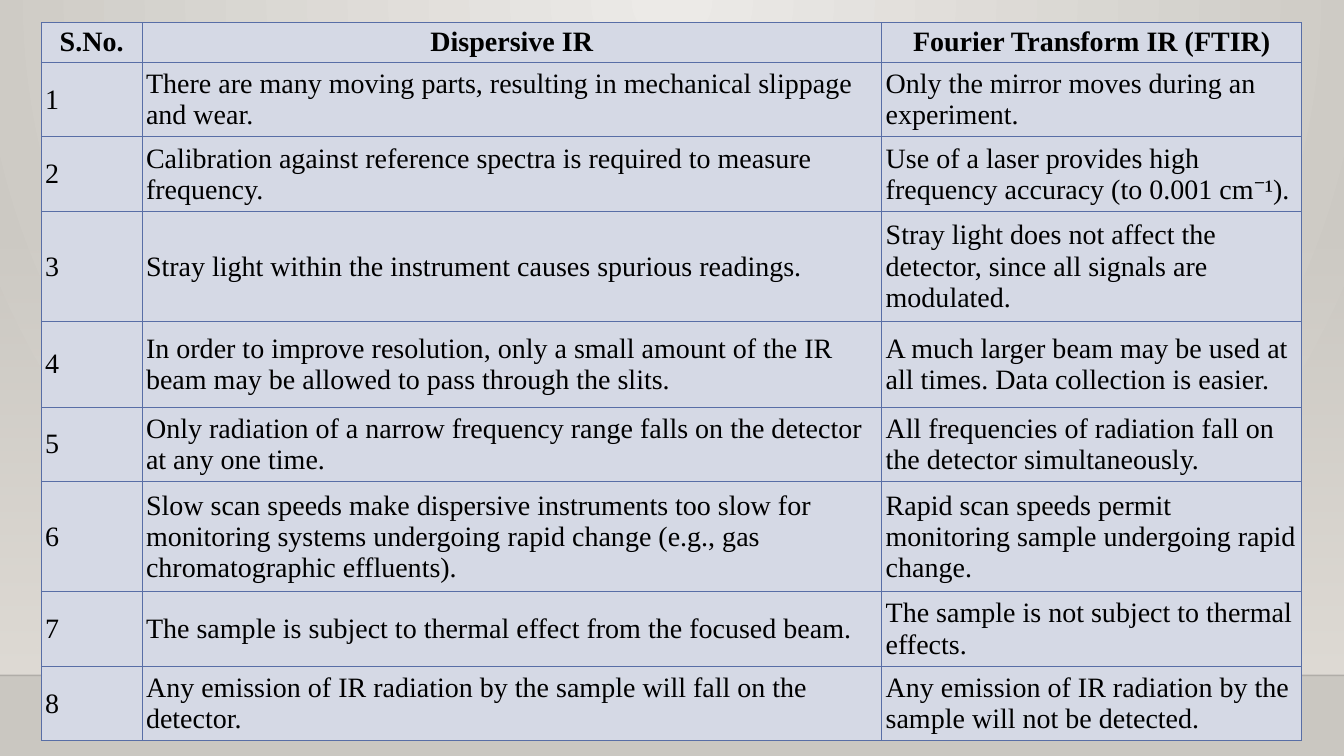
from lxml.etree import SubElement
from pptx import Presentation
from pptx.dml.color import RGBColor
from pptx.enum.shapes import MSO_CONNECTOR, MSO_SHAPE
from pptx.enum.text import MSO_ANCHOR, PP_ALIGN
from pptx.oxml import parse_xml
from pptx.oxml.ns import nsdecls, qn
from pptx.util import Cm, Pt

BLACK = RGBColor(0x00, 0x00, 0x00)
WALL_LIGHT = RGBColor(0xEC, 0xEA, 0xE7)
WALL_DARK = RGBColor(0xCA, 0xC7, 0xC1)
GLOW = RGBColor(0xDF, 0xDB, 0xD5)
CELL_FILL = RGBColor(0xD5, 0xD9, 0xE5)
BORDER = RGBColor(0x58, 0x6E, 0xA6)

WIDTH, HEIGHT, FLOOR = 33.87, 19.05, 17.02

COLUMN_WIDTHS = [2.54, 18.64, 10.59]
ROW_HEIGHTS = [1, 1.88, 1.88, 2.77, 2.16, 1.88, 2.77, 1.88, 1.88]
HEADINGS = ["S.No.", "Dispersive IR", "Fourier Transform IR (FTIR)"]
COMPARISONS = [
    ("There are many moving parts, resulting in mechanical slippage and wear.",
     "Only the mirror moves during an experiment."),
    ("Calibration against reference spectra is required to measure frequency.",
     "Use of a laser provides high frequency accuracy (to 0.001 cm⁻¹)."),
    ("Stray light within the instrument causes spurious readings.",
     "Stray light does not affect the detector, since all signals are modulated."),
    ("In order to improve resolution, only a small amount of the IR beam may be "
     "allowed to pass through the slits.",
     "A much larger beam may be used at all times. Data collection is easier."),
    ("Only radiation of a narrow frequency range falls on the detector at any one time.",
     "All frequencies of radiation fall on the detector simultaneously."),
    ("Slow scan speeds make dispersive instruments too slow for monitoring systems "
     "undergoing rapid change (e.g., gas chromatographic effluents).",
     "Rapid scan speeds permit monitoring sample undergoing rapid change."),
    ("The sample is subject to thermal effect from the focused beam.",
     "The sample is not subject to thermal effects."),
    ("Any emission of IR radiation by the sample will fall on the detector.",
     "Any emission of IR radiation by the sample will not be detected."),
]


class SlideBuilder:
    font = "Times New Roman"
    size = Pt(20)

    def __init__(self, page):
        self.page = page

    def set_alpha(self, color_parent, percent):
        color = color_parent.find(".//" + qn("a:srgbClr"))
        SubElement(color, qn("a:alpha"), val=str(percent * 1000))

    def gradient(self, fill, colors):
        fill.gradient()
        for stop, color, position in zip(fill.gradient_stops, colors, (0, 1)):
            stop.color.rgb = color
            stop.position = position

    def background(self, center, edge):
        self.gradient(self.page.background.fill, (center, edge))
        grad = self.page.element.find(".//" + qn("a:gradFill"))
        grad.replace(grad.find(qn("a:lin")), parse_xml(
            f'<a:path {nsdecls("a")} path="circle">'
            '<a:fillToRect l="43000" t="0" r="43000" b="100000"/></a:path>'))

    def fading_band(self, top, height, color):
        band = self.page.shapes.add_shape(
            MSO_SHAPE.RECTANGLE, 0, Cm(top), Cm(WIDTH), Cm(height))
        band.shadow.inherit = False
        band.line.fill.background()
        self.gradient(band.fill, (color, color))
        band.fill.gradient_angle = 270
        self.set_alpha(band.element.find(".//" + qn("a:gs")), 0)

    def horizon(self, top, color, opacity):
        line = self.page.shapes.add_connector(
            MSO_CONNECTOR.STRAIGHT, 0, Cm(top), Cm(WIDTH), Cm(top))
        line.line.color.rgb = color
        line.line.width = Pt(1)
        properties = line.element.spPr
        self.set_alpha(properties, opacity)
        SubElement(properties, qn("a:effectLst"))

    def cell_borders(self, cell):
        properties = cell._tc.get_or_add_tcPr()
        for index, side in enumerate(("lnL", "lnR", "lnT", "lnB")):
            properties.insert(index, parse_xml(
                f'<a:{side} {nsdecls("a")} w="{Pt(0.75)}"><a:solidFill>'
                f'<a:srgbClr val="{BORDER}"/></a:solidFill></a:{side}>'))

    def cell(self, cell, text, heading, centered):
        cell.margin_left = cell.margin_right = Cm(0.1)
        cell.margin_top = cell.margin_bottom = Cm(0.05)
        cell.vertical_anchor = MSO_ANCHOR.MIDDLE
        cell.fill.solid()
        cell.fill.fore_color.rgb = CELL_FILL
        self.cell_borders(cell)
        cell.text_frame.text = text
        para = cell.text_frame.paragraphs[0]
        para.alignment = PP_ALIGN.CENTER if centered else PP_ALIGN.LEFT
        for span in para.runs:
            span.font.name = self.font
            span.font.size = self.size
            span.font.bold = heading
            span.font.color.rgb = BLACK

    def table(self, left, top, widths, heights, rows):
        table = self.page.shapes.add_table(
            len(heights), len(widths), Cm(left), Cm(top),
            Cm(sum(widths)), Cm(sum(heights))).table
        table.horz_banding = False
        for column, width in zip(table.columns, widths):
            column.width = Cm(width)
        for index, (row, height, texts) in enumerate(zip(table.rows, heights, rows)):
            row.height = Cm(height)
            for cell, text in zip(row.cells, texts):
                self.cell(cell, text, heading=index == 0, centered=index == 0)


def main():
    deck = Presentation()
    deck.slide_width, deck.slide_height = Cm(WIDTH), Cm(HEIGHT)
    builder = SlideBuilder(deck.slides.add_slide(deck.slide_layouts[6]))

    # Backdrop: lit wall with a floor line
    builder.background(WALL_LIGHT, WALL_DARK)
    builder.fading_band(5.61, FLOOR - 5.61, GLOW)
    builder.horizon(FLOOR, BLACK, 20)

    # Comparison table, numbered from 1
    rows = [HEADINGS] + [(str(number), *pair)
                         for number, pair in enumerate(COMPARISONS, 1)]
    builder.table(1.04, 0.57, COLUMN_WIDTHS, ROW_HEIGHTS, rows)

    deck.save("out.pptx")


if __name__ == "__main__":
    main()
